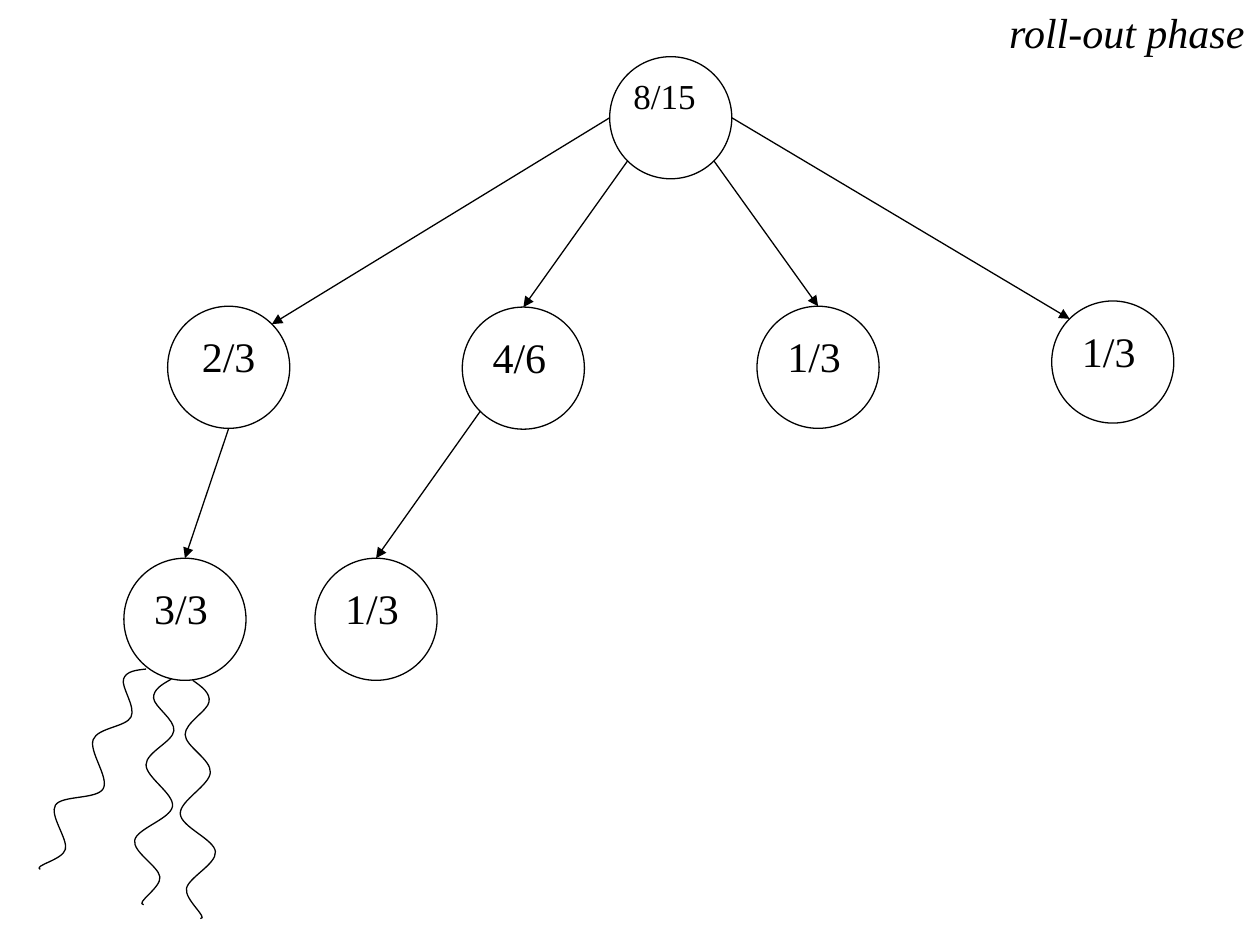
from math import cos, radians, sin

from lxml.etree import SubElement
from pptx import Presentation
from pptx.dml.color import RGBColor
from pptx.enum.shapes import MSO_CONNECTOR, MSO_SHAPE
from pptx.enum.text import MSO_ANCHOR, MSO_AUTO_SIZE, PP_ALIGN
from pptx.oxml.ns import qn
from pptx.util import Pt

BLACK = RGBColor(0, 0, 0)
FONT = "Times New Roman"
SIZE = 69.8  # diameter of a node
LEFT, STEP = 95.8, 168.4  # first child and distance to the next

# name: (label, left, top, text format)
NODES = {
    "root": ("8/15", 348.4, 32.4,
             {"size": 20, "align": PP_ALIGN.CENTER, "inset": (0, 0, 7.2, 3.6)}),
    "a": ("2/3", LEFT, 175, {"align": PP_ALIGN.CENTER}),
    "b": ("4/6", LEFT + STEP, 175.5, {}),
    "c": ("1/3", LEFT + 2 * STEP, 175, {}),
    "d": ("1/3", LEFT + 3 * STEP, 172, {}),
    "aa": ("3/3", 70.8, 319, {}),
    "ba": ("1/3", 180, 319, {}),
}

# parent, angle there, child, angle there (clockwise from the right)
TOP = 270
EDGES = [
    ("root", 180, "a", 315),
    ("root", 135, "b", TOP),
    ("root", 45, "c", TOP),
    ("root", 0, "d", 225),
    ("a", 90, "aa", TOP),
    ("b", 135, "ba", TOP),
]

# knots of each roll-out, and the last control point
WAVES = [
    ([(110.2, 388.8), (119.5, 401), (105.8, 419.8), (120.2, 441.4),
      (103, 465.1), (123.1, 486.7), (106.6, 507.6), (114.5, 524.9)],
     (119.5, 524.9)),
    ([(97.9, 388.1), (87.8, 398.9), (99.4, 417.6), (83.5, 437),
      (98.6, 460.8), (77, 480.2), (91.4, 501.1), (82.1, 517)],
     (77, 516.2)),
    ([(83.5, 382.3), (70.6, 388.1), (74.9, 409.7), (53.3, 422.6),
      (59, 450.7), (31.7, 460.1), (37.4, 485.3), (23, 496.8)],
     (18.7, 494.6)),
]


def write(shape, text, size=24, align=PP_ALIGN.LEFT, italic=False,
          inset=(7.2, 3.6, 7.2, 3.6), wrap=True):
    frame = shape.text_frame
    frame.word_wrap = wrap
    frame.vertical_anchor = MSO_ANCHOR.TOP
    (frame.margin_left, frame.margin_top,
     frame.margin_right, frame.margin_bottom) = map(Pt, inset)
    para = frame.paragraphs[0]
    para.alignment = align
    run = para.add_run()
    run.text = text
    font = run.font
    font.name, font.size, font.italic = FONT, Pt(size), italic
    font.color.rgb = BLACK


def ink(shape):
    """Give a thin black line."""
    shape.line.color.rgb = BLACK
    shape.line.width = Pt(0.75)


def outline(shape):
    shape.shadow.inherit = False
    shape.fill.background()
    ink(shape)


def rim(name, angle):
    """Return the point on a node's circle at an angle."""
    _, left, top, _ = NODES[name]
    half, turn = SIZE / 2, radians(angle)
    return Pt(left + half + half * cos(turn)), Pt(top + half + half * sin(turn))


def join(slide, discs, start, out, end, into):
    """Draw an arrow from one node to another."""
    arrow = slide.shapes.add_connector(
        MSO_CONNECTOR.STRAIGHT, *rim(start, out), *rim(end, into))
    if into == TOP:
        arrow.end_connect(discs[end], 0)
    ink(arrow)
    SubElement(arrow.line._get_or_add_ln(), qn("a:tailEnd"), type="triangle")
    SubElement(arrow.element.spPr, qn("a:effectLst"))


def bend(knots, last):
    """Return the control points of a smooth curve through the knots."""
    slopes = [((c[0] - a[0]) / 6, (c[1] - a[1]) / 6)
              for a, c in zip(knots, knots[2:])]
    before = [(x - dx, y - dy) for (x, y), (dx, dy) in zip(knots[1:], slopes)]
    after = [(x + dx, y + dy) for (x, y), (dx, dy) in zip(knots[1:], slopes)]
    first = tuple((p + q) / 2 for p, q in zip(knots[0], before[0]))
    return [point for trio in zip([first] + after, before + [last], knots[1:])
            for point in trio]


def wave(slide, knots, last):
    x, y = knots[0]
    pen = slide.shapes.build_freeform(Pt(x), Pt(y))
    pen.add_line_segments(
        [(Pt(x), Pt(y)) for x, y in bend(knots, last)], close=False)
    shape = pen.convert_to_shape()
    outline(shape)
    track = shape.element.xpath(".//a:path")[0]
    lines = track.findall(qn("a:lnTo"))
    for i in range(0, len(lines), 3):  # three points make one curve
        curve = SubElement(track, qn("a:cubicBezTo"))
        for line in lines[i:i + 3]:
            curve.append(line[0])
            track.remove(line)


def main():
    deck = Presentation()
    deck.slide_width, deck.slide_height = Pt(720), Pt(540)
    slide = deck.slides.add_slide(deck.slide_layouts[5])

    title = slide.shapes.title
    title.left, title.top = Pt(569.5), Pt(0)
    title.width, title.height = Pt(150.5), Pt(36)
    write(title, "roll-out phase", italic=True, wrap=False)
    title.text_frame.auto_size = MSO_AUTO_SIZE.SHAPE_TO_FIT_TEXT

    discs = {}
    for name, (label, left, top, style) in NODES.items():
        disc = slide.shapes.add_shape(
            MSO_SHAPE.OVAL, Pt(left), Pt(top), Pt(SIZE), Pt(SIZE))
        outline(disc)
        write(disc, label, **style)
        discs[name] = disc

    for edge in EDGES:
        join(slide, discs, *edge)
    for knots, last in WAVES:
        wave(slide, knots, last)
    deck.save("out.pptx")


if __name__ == "__main__":
    main()
